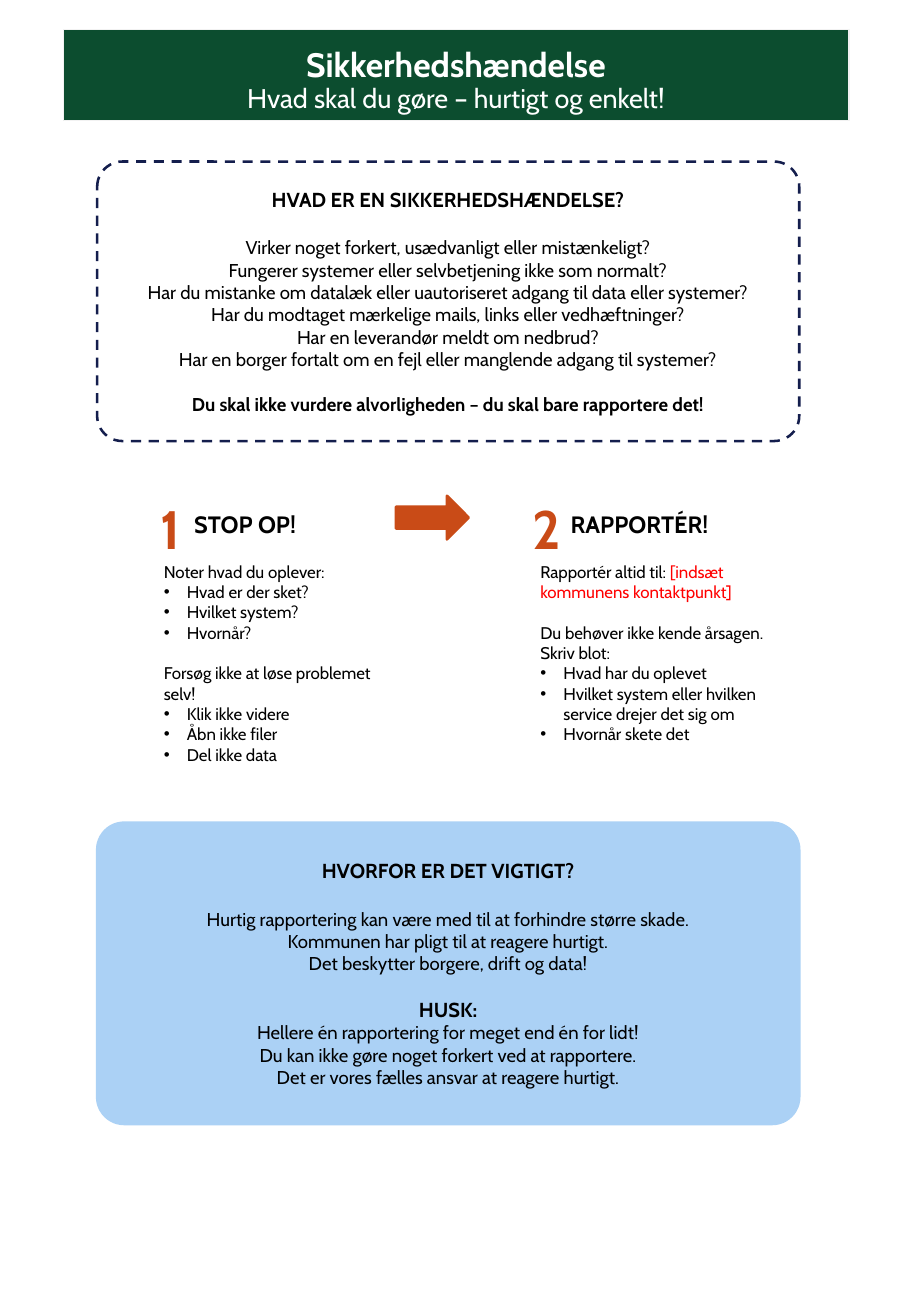
from dataclasses import dataclass
from lxml import etree
from pptx import Presentation, util as u
from pptx.dml.color import RGBColor
from pptx.enum import dml, shapes, text
from pptx.oxml.ns import qn


@dataclass(frozen=True)
class Theme:
    font: str = "Cabin"
    green: str = "0C4D2F"
    orange: str = "C94B17"
    navy: str = "141E4D"
    blue: str = "ABD1F5"
    pale: str = "F2F2F2"
    white: str = "FFFFFF"
    black: str = "000000"
    red: str = "FF0000"
    title: int = 20
    subtitle: int = 16
    number: int = 32
    label: int = 14
    heading: int = 12
    body: int = 11
    small: int = 10


T = Theme()
SHAPE = shapes.MSO_SHAPE
CENTER, LEFT = text.PP_ALIGN.CENTER, text.PP_ALIGN.LEFT
MIDDLE, TOP, BOTTOM = text.MSO_ANCHOR.MIDDLE, text.MSO_ANCHOR.TOP, text.MSO_ANCHOR.BOTTOM


def para(content, size=T.body, bold=False, color=T.black, gap=0, bullet=False):
    runs = [(content, color)] if isinstance(content, str) else content
    return dict(runs=runs, size=size, bold=bold, gap=gap, bullet=bullet)


def apply(target, values):
    for name, value in values.items():
        setattr(target, name, value)


class Poster:
    def __init__(self, slide, theme):
        self.s, self.t = slide, theme

    def fill_text(self, sp, paras, align, anchor, spacing=None):
        tf = sp.text_frame
        apply(tf, dict(word_wrap=True, vertical_anchor=anchor))
        for i, item in enumerate(paras):
            p = tf.paragraphs[0] if i == 0 else tf.add_paragraph()
            if item["bullet"]:
                self.bullet(p)
            apply(p, dict(alignment=align, line_spacing=spacing, space_before=u.Pt(item["gap"])))
            for content, color in item["runs"]:
                r = p.add_run()
                r.text = content
                apply(r.font, dict(name=self.t.font, size=u.Pt(item["size"]), bold=item["bold"]))
                r.font.color.rgb = RGBColor.from_string(color)

    def bullet(self, p):
        pPr = p._p.get_or_add_pPr()
        indent = u.Inches(0.19)
        pPr.set("marL", str(indent))
        pPr.set("indent", str(-indent))
        etree.SubElement(pPr, qn("a:buFont")).set("typeface", "Arial")
        etree.SubElement(pPr, qn("a:buChar")).set("char", "•")

    def shape(self, kind, box, fill, line, width, paras=(), anchor=MIDDLE,
              spacing=None, radius=None, dash=None):
        sp = self.s.shapes.add_shape(kind, *map(u.Inches, box))
        sp.shadow.inherit = False
        if fill:
            sp.fill.solid()
            sp.fill.fore_color.rgb = RGBColor.from_string(fill)
        else:
            sp.fill.background()
        sp.line.color.rgb = RGBColor.from_string(line)
        apply(sp.line, dict(width=u.Pt(width), dash_style=dash))
        if radius:
            sp.adjustments[0] = radius
        self.fill_text(sp, paras, CENTER, anchor, spacing)

    def panel(self, top, height, fill, line, paras, dash=None):
        self.shape(SHAPE.ROUNDED_RECTANGLE, (0.8, top, 5.78, height), fill, line, 1.5,
                   paras, radius=0.09, dash=dash)

    def text(self, box, paras, align=LEFT, anchor=TOP):
        sp = self.s.shapes.add_textbox(*map(u.Inches, box))
        self.fill_text(sp, paras, align, anchor)

    def step(self, left, number, label, label_width, height, paras):
        self.text((left, 4.08, 0.6, 0.53),
                  [para(number, self.t.number, True, self.t.orange)], CENTER, MIDDLE)
        self.text((left + 0.4, 4.13, label_width, 0.36),
                  [para(label, self.t.label, True)], LEFT, MIDDLE)
        self.text((left + 0.15, 4.57, 2.08, height), paras)


def note(content, gap=0):
    return para(content, T.small, gap=gap)


def bullets(*items):
    return [para(item, T.small, bullet=True) for item in items]


def lines(*items, gap=0):
    return [para(item, gap=gap if i == 0 else 0) for i, item in enumerate(items)]


def main():
    prs = Presentation()
    apply(prs, dict(slide_width=u.Inches(7.5), slide_height=u.Inches(10.83)))
    poster = Poster(prs.slides.add_slide(prs.slide_layouts[6]), T)

    poster.shape(SHAPE.RECTANGLE, (0.52, 0.24, 6.47, 0.75), T.green, T.pale, 0.75, [
        para("Sikkerhedshændelse", T.title, True, T.white),
        para("Hvad skal du gøre – hurtigt og enkelt!", T.subtitle, color=T.white),
    ], BOTTOM, 0.9)

    poster.panel(1.33, 2.3, None, T.navy, [
        para("HVAD ER EN SIKKERHEDSHÆNDELSE?", T.heading, True),
        *lines("Virker noget forkert, usædvanligt eller mistænkeligt?",
               "Fungerer systemer eller selvbetjening ikke som normalt?",
               "Har du mistanke om datalæk eller uautoriseret adgang til data eller systemer?",
               "Har du modtaget mærkelige mails, links eller vedhæftninger?",
               "Har en leverandør meldt om nedbrud?",
               "Har en borger fortalt om en fejl eller manglende adgang til systemer?", gap=14.6),
        para("Du skal ikke vurdere alvorligheden – du skal bare rapportere det!",
             bold=True, gap=13.4),
    ], dml.MSO_LINE.DASH)

    poster.step(1.1, "1", "STOP OP!", 1.06, 1.24, [
        note("Noter hvad du oplever:"),
        *bullets("Hvad er der sket?", "Hvilket system?", "Hvornår?"),
        note("Forsøg ikke at løse problemet selv!", 12.2),
        *bullets("Klik ikke videre", "Åbn ikke filer", "Del ikke data"),
    ])
    poster.shape(SHAPE.RIGHT_ARROW, (3.26, 4.08, 0.6, 0.36), T.orange, T.orange, 1.5)
    poster.step(4.2, "2", "RAPPORTÉR!", 1.54, 1.61, [
        note([("Rapportér altid til: ", T.black), ("[indsæt kommunens kontaktpunkt]", T.red)]),
        note("Du behøver ikke kende årsagen. Skriv blot:", 12.2),
        *bullets("Hvad har du oplevet", "Hvilket system eller hvilken service drejer det sig om",
                 "Hvornår skete det"),
    ])

    poster.panel(6.77, 2.48, T.blue, T.blue, [
        para("HVORFOR ER DET VIGTIGT?", T.heading, True),
        *lines("Hurtig rapportering kan være med til at forhindre større skade.",
               "Kommunen har pligt til at reagere hurtigt.",
               "Det beskytter borgere, drift og data!", gap=14.6),
        para("HUSK:", T.heading, True, gap=13.4),
        *lines("Hellere én rapportering for meget end én for lidt!",
               "Du kan ikke gøre noget forkert ved at rapportere.",
               "Det er vores fælles ansvar at reagere hurtigt."),
    ])
    prs.save("out.pptx")


if __name__ == "__main__":
    main()
